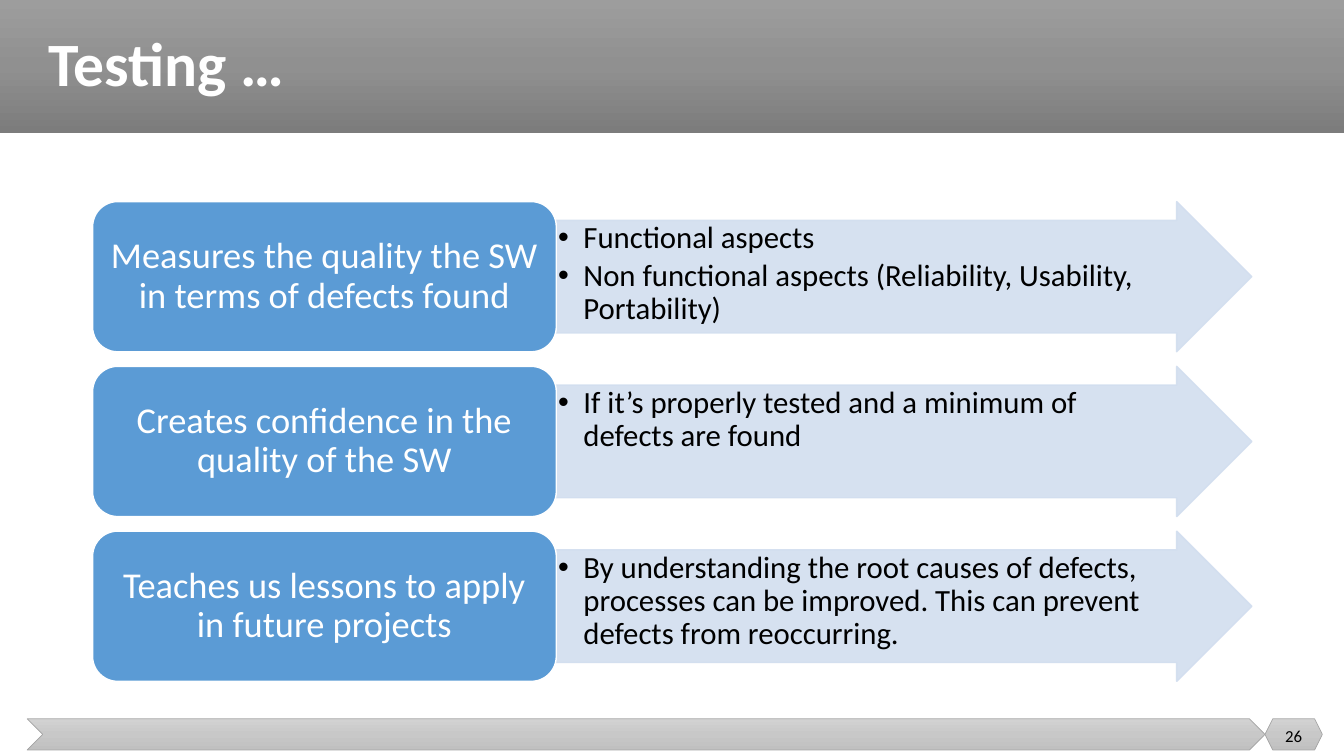
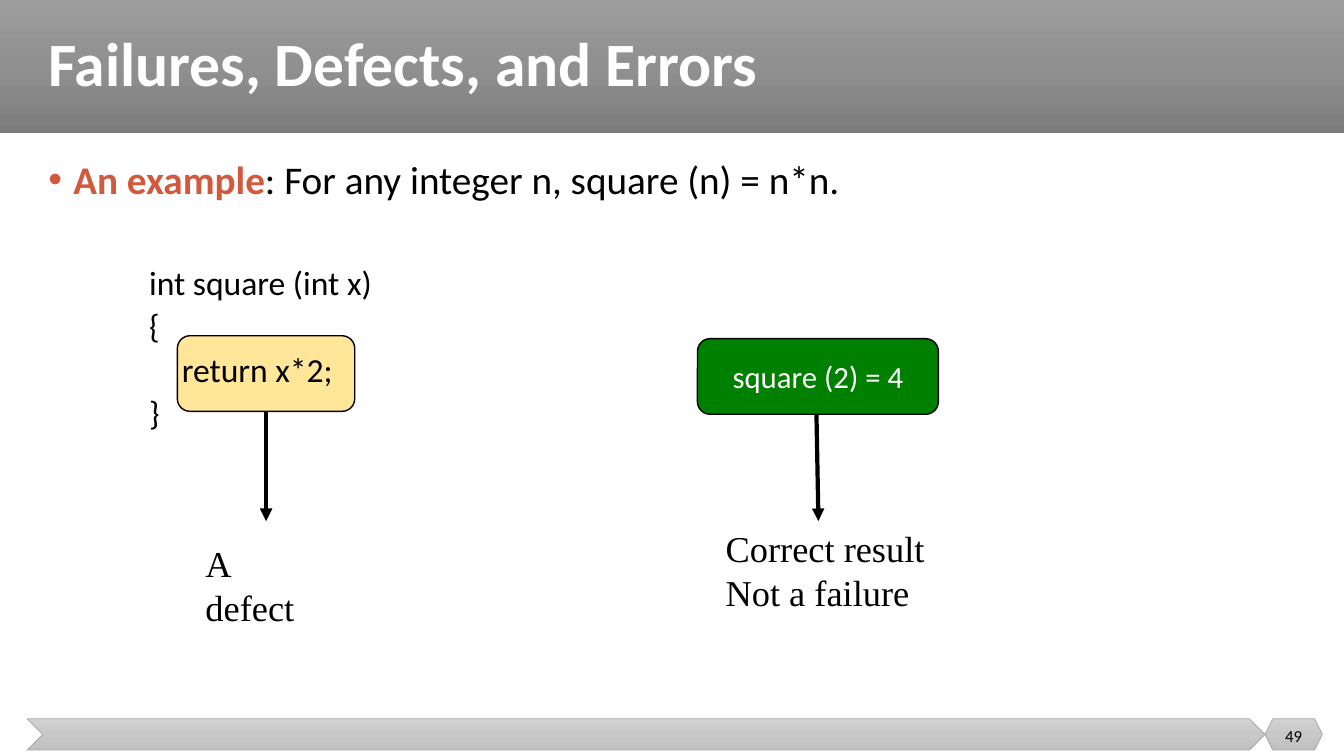
from copy import deepcopy
from dataclasses import dataclass

from lxml.etree import SubElement
from pptx import Presentation
from pptx.dml.color import RGBColor
from pptx.enum.shapes import MSO_CONNECTOR as Connector, MSO_SHAPE as Preset
from pptx.enum.text import MSO_ANCHOR as Anchor, PP_ALIGN as Align
from pptx.oxml.ns import qn
from pptx.util import Pt

WIDTH, HEIGHT = 960, 540
BAND_HEIGHT = 95
MARGIN = 27.4
CONTENT_WIDTH = 917.3
FOOTER_TOP, FOOTER_HEIGHT = 513.4, 22.3
FOOTER_LEFT, FOOTER_SPLIT, NUMBER_WIDTH = 19.4, 903.6, 41

BLACK, WHITE = "000000", "FFFFFF"
BAND_GRADIENT = ("9D9D9D", "909090", "7C7C7C")
FOOTER_GRADIENT = ("D2D2D2", "C8C8C8", "C0C0C0")
FOOTER_LINE = "A5A5A5"
BLUE, PALE_BLUE = "5B9BD5", "D2DEEF"
ACCENT, YELLOW, GREEN = "D15A3E", "FFE699", "008000"
BODY_FONT, NOTE_FONT = "Calibri", "Times New Roman"

ROW_TOP, ROW_HEIGHT, ROW_PITCH = 144, 107.3, 117.7
LABEL_LEFT, LABEL_WIDTH, ARROW_WIDTH = 66.2, 331.2, 496.8


@dataclass(frozen=True)
class Box:
    left: float
    top: float
    width: float
    height: float

    def lengths(self) -> tuple:
        return Pt(self.left), Pt(self.top), Pt(self.width), Pt(self.height)


@dataclass(frozen=True)
class Benefit:
    label: str
    details: tuple[str, ...]


@dataclass(frozen=True)
class Pointer:
    start: tuple[float, float]
    end: tuple[float, float]


@dataclass(frozen=True)
class Verdict:
    box: Box
    lines: tuple[str, ...]


BENEFITS = (
    Benefit(
        "Measures the quality the SW in terms of defects found",
        (
            "Functional aspects",
            "Non functional aspects (Reliability, Usability, Portability)",
        ),
    ),
    Benefit(
        "Creates confidence in the quality of the SW",
        ("If it’s properly tested and a minimum of defects are found",),
    ),
    Benefit(
        "Teaches us lessons to apply in future projects",
        (
            "By understanding the root causes of defects, processes can be improved. "
            "This can prevent defects from reoccurring.",
        ),
    ),
)
CODE_LINES = (
    ("int square (int x)", 72, 45.7),
    ("{", 72, 5),
    ("return x*2;", 95.4, 5),
    ("}", 72, 5),
)
POINTERS = (
    Pointer((583.2, 296.6), (584.6, 372.2)),
    Pointer((190.1, 293.8), (190.1, 372.2)),
)
VERDICTS = (
    Verdict(Box(511.2, 372.2, 213.1, 108.7), ("Correct result", "Not a failure")),
    Verdict(Box(139.7, 383, 100.8, 70), ("A defect",)),
)


def rgb(color: str) -> RGBColor:
    return RGBColor.from_string(color)


def paint(fill, color: str) -> None:
    fill.solid()
    fill.fore_color.rgb = rgb(color)


def paint_gradient(shape, colors: tuple[str, str, str]) -> None:
    shape.fill.gradient()
    shape.fill.gradient_angle = 270
    stops = shape._element.spPr.find(".//" + qn("a:gsLst"))
    stops.insert(1, deepcopy(stops[0]))
    for index, (stop, color) in enumerate(zip(shape.fill.gradient_stops, colors)):
        stop.position = index / 2
        stop.color.rgb = rgb(color)


def set_opacity(shape, percent: int) -> None:
    for color in shape._element.spPr.iter(qn("a:srgbClr")):
        SubElement(color, qn("a:alpha"), val=str(percent * 1000))


def set_frame(shape, anchor=Anchor.TOP, insets=(7.2, 3.6, 7.2, 3.6)) -> None:
    frame = shape.text_frame
    frame.word_wrap = True
    frame.vertical_anchor = anchor
    frame.margin_left, frame.margin_top, frame.margin_right, frame.margin_bottom = map(Pt, insets)


def add_preset(slide, preset, box: Box, fill=None, line=None, line_width=1.0):
    shape = slide.shapes.add_shape(preset, *box.lengths())
    shape.shadow.inherit = False
    if isinstance(fill, tuple):
        paint_gradient(shape, fill)
    else:
        paint(shape.fill, fill)
    if line:
        paint(shape.line.fill, line)
        shape.line.width = Pt(line_width)
    else:
        shape.line.fill.background()
    return shape


def add_text_box(slide, box: Box, **frame_format):
    shape = slide.shapes.add_textbox(*box.lengths())
    set_frame(shape, **frame_format)
    return shape


def write(
    shape,
    text: str,
    *,
    size: float,
    color: str = BLACK,
    font: str = BODY_FONT,
    bold: bool = False,
    align=Align.LEFT,
    line_spacing: float = 1.0,
    before: float = 0,
    after: float = 0,
    left: float = 0,
    hanging: float = 0,
    bullet: bool = False,
    lead: str = "",
    lead_color: str = ACCENT,
) -> None:
    frame = shape.text_frame
    paragraph = frame.paragraphs[0] if not frame.text else frame.add_paragraph()
    paragraph.alignment = align
    paragraph.line_spacing = line_spacing
    paragraph.space_before = Pt(before)
    paragraph.space_after = Pt(after)
    properties = paragraph._p.get_or_add_pPr()
    properties.set("marL", str(Pt(left)))
    properties.set("indent", str(-Pt(hanging)))
    if bullet:
        SubElement(properties, qn("a:buFont"), typeface="Arial")
        SubElement(properties, qn("a:buChar"), char="•")
    for words, words_color, words_bold in ((lead, lead_color, True), (text, color, bold)):
        if words:
            run = paragraph.add_run()
            run.text = words
            run.font.name = font
            run.font.size = Pt(size)
            run.font.bold = words_bold
            run.font.color.rgb = rgb(words_color)


def add_pointer(slide, pointer: Pointer) -> None:
    connector = slide.shapes.add_connector(
        Connector.STRAIGHT, *map(Pt, pointer.start + pointer.end)
    )
    paint(connector.line.fill, BLACK)
    connector.line.width = Pt(3)
    properties = connector._element.spPr
    SubElement(properties.find(qn("a:ln")), qn("a:tailEnd"), type="triangle")
    SubElement(properties, qn("a:effectLst"))


def add_base_slide(presentation, title: str, number: int):
    slide = presentation.slides.add_slide(presentation.slide_layouts[6])
    add_preset(slide, Preset.RECTANGLE, Box(0, 0, WIDTH, BAND_HEIGHT), BAND_GRADIENT)
    chevron = Box(FOOTER_LEFT, FOOTER_TOP, FOOTER_SPLIT - FOOTER_LEFT, FOOTER_HEIGHT)
    add_preset(slide, Preset.CHEVRON, chevron, FOOTER_GRADIENT, FOOTER_LINE, 0.5)
    hexagon = Box(FOOTER_SPLIT, FOOTER_TOP, NUMBER_WIDTH, FOOTER_HEIGHT)
    number_shape = add_preset(slide, Preset.HEXAGON, hexagon, FOOTER_GRADIENT, FOOTER_LINE, 0.5)
    set_frame(number_shape, anchor=Anchor.MIDDLE, insets=(0, 2, 0, 0))
    write(number_shape, str(number), size=12, align=Align.CENTER)
    title_box = add_text_box(
        slide, Box(MARGIN, 0, CONTENT_WIDTH, BAND_HEIGHT), anchor=Anchor.MIDDLE
    )
    write(title_box, title, size=44, color=WHITE, bold=True, line_spacing=0.9)
    return slide


def add_benefit(slide, benefit: Benefit, top: float) -> None:
    arrow_box = Box(LABEL_LEFT + LABEL_WIDTH, top, ARROW_WIDTH, ROW_HEIGHT)
    arrow = add_preset(slide, Preset.RIGHT_ARROW, arrow_box, PALE_BLUE, PALE_BLUE)
    arrow.adjustments[0] = 0.75
    set_opacity(arrow, 90)
    set_frame(arrow, insets=(1.4, 1.4, 28, 1.4))
    for detail in benefit.details:
        write(arrow, detail, size=22, line_spacing=0.9, after=3, left=18, hanging=18, bullet=True)
    label_box = Box(LABEL_LEFT, top, LABEL_WIDTH, ROW_HEIGHT)
    label = add_preset(slide, Preset.ROUNDED_RECTANGLE, label_box, BLUE, WHITE)
    set_frame(label, anchor=Anchor.MIDDLE, insets=(7.8, 3.9, 7.8, 3.9))
    write(label, benefit.label, size=26, color=WHITE, align=Align.CENTER, line_spacing=0.9)


def build_testing(presentation) -> None:
    slide = add_base_slide(presentation, "Testing …", 26)
    for index, benefit in enumerate(BENEFITS):
        add_benefit(slide, benefit, ROW_TOP + index * ROW_PITCH)


def build_failures(presentation) -> None:
    slide = add_base_slide(presentation, "Failures, Defects, and Errors", 49)
    defect_box = Box(126.7, 239.8, 126.7, 54)
    add_preset(slide, Preset.ROUNDED_RECTANGLE, defect_box, YELLOW, BLACK)
    body = add_text_box(slide, Box(MARGIN, 110.9, CONTENT_WIDTH, 373.7))
    write(
        body,
        ": For any integer n, square (n) = n*n.",
        lead="An example",
        size=28,
        line_spacing=0.9,
        left=18,
        hanging=18,
        bullet=True,
    )
    for code, left, before in CODE_LINES:
        write(body, code, size=24, line_spacing=0.9, left=left, before=before)
    for verdict in VERDICTS:
        verdict_box = add_text_box(slide, verdict.box)
        for line in verdict.lines:
            write(verdict_box, line, size=26, font=NOTE_FONT)
    for pointer in POINTERS:
        add_pointer(slide, pointer)
    result_box = Box(498.2, 241.9, 172.1, 54)
    result = add_preset(slide, Preset.ROUNDED_RECTANGLE, result_box, GREEN, BLACK)
    set_frame(result, anchor=Anchor.MIDDLE)
    write(result, "square (2) = 4", size=22, color=WHITE, align=Align.CENTER)


def main() -> None:
    presentation = Presentation()
    presentation.slide_width, presentation.slide_height = Pt(WIDTH), Pt(HEIGHT)
    build_testing(presentation)
    build_failures(presentation)
    presentation.save("out.pptx")


if __name__ == "__main__":
    main()
